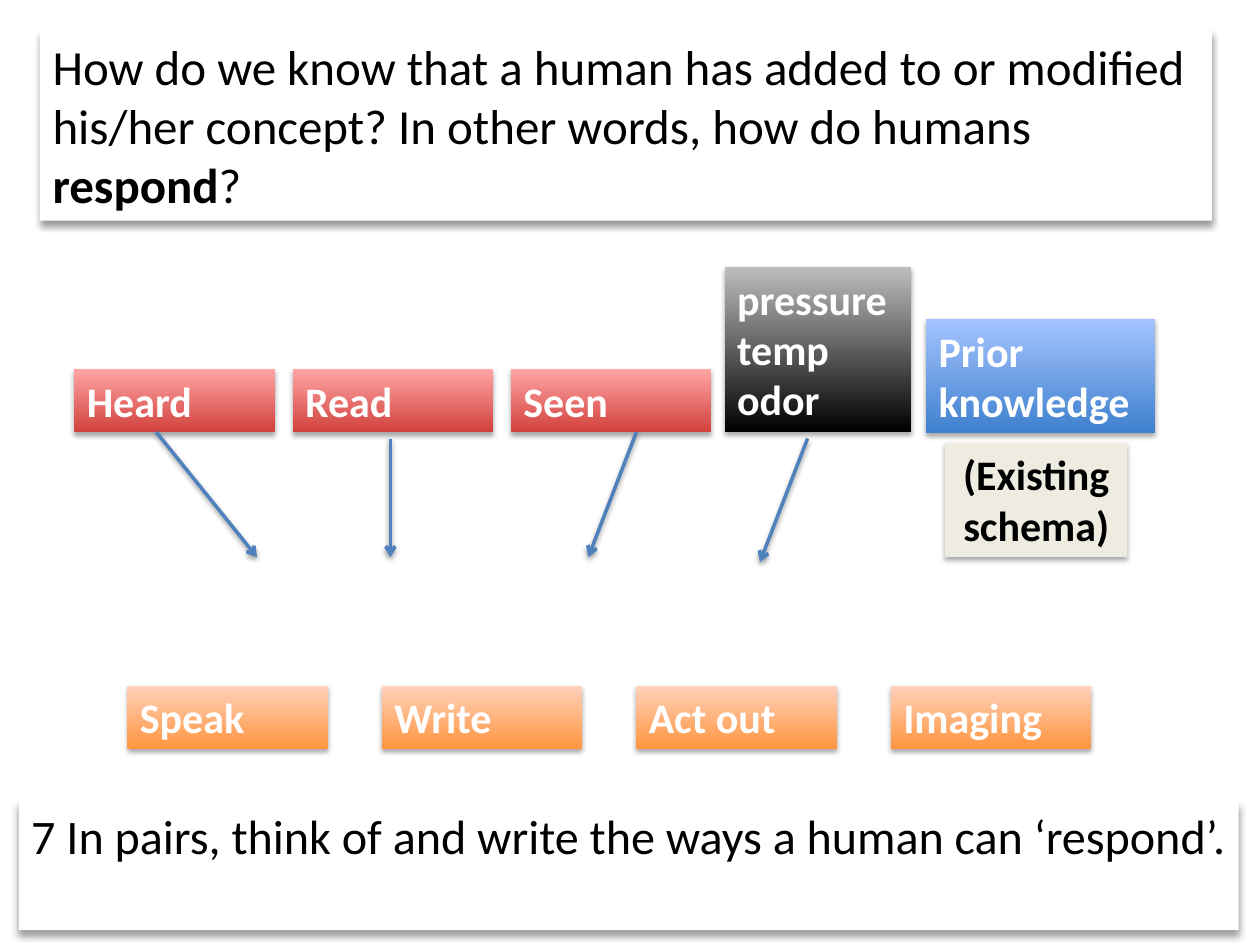
from lxml import etree
from pptx import Presentation
from pptx.dml.color import RGBColor
from pptx.enum.shapes import MSO_CONNECTOR as Link, MSO_SHAPE as Form
from pptx.enum.text import MSO_ANCHOR as Anchor, MSO_AUTO_SIZE as Fit, PP_ALIGN as Align
from pptx.oxml.ns import qn
from pptx.util import Cm, Pt

tint = RGBColor.from_string
deck = Presentation()
deck.slide_width, deck.slide_height = Cm(25.4), Cm(19.05)
slide = deck.slides.add_slide(deck.slide_layouts[6])


def shade(props, blur, dist, alpha):
    """Drop a black shadow straight down."""
    for old in props.findall(qn("a:effectLst")):
        props.remove(old)
    group = etree.SubElement(props, qn("a:effectLst"))
    drop = etree.SubElement(group, qn("a:outerShdw"), blurRad=str(Pt(blur)),
                            dist=str(Pt(dist)), dir="5400000", rotWithShape="0")
    black = etree.SubElement(drop, qn("a:srgbClr"), val="000000")
    etree.SubElement(black, qn("a:alpha"), val=str(alpha * 1000))


def box(text, at, fill, size=24, color="FFFFFF", bold=True, align=Align.LEFT,
        shadow=(3.1, 1.8, 35)):
    """Add a box; fill is (bottom, top) or (plain,); * switches bold."""
    shape = slide.shapes.add_shape(Form.RECTANGLE, *[Cm(n) for n in at])
    if len(fill) == 2:
        shape.fill.gradient()
        shape.fill.gradient_angle = 90
        for place, (stop, code) in enumerate(zip(shape.fill.gradient_stops, fill)):
            stop.position = place
            stop.color.rgb = tint(code)
    else:
        shape.fill.solid()
        shape.fill.fore_color.rgb = tint(fill[0])
    shape.line.fill.background()
    shape.shadow.inherit = False
    shade(shape.element.spPr, *shadow)

    frame = shape.text_frame
    frame.word_wrap = True
    frame.auto_size = Fit.SHAPE_TO_FIT_TEXT
    frame.vertical_anchor = Anchor.TOP
    for row, words in enumerate(text.split("\n")):
        para = frame.add_paragraph() if row else frame.paragraphs[0]
        para.alignment = align
        for turn, part in enumerate(words.split("*")):
            run = para.add_run()
            run.text = part
            font = run.font
            font.name, font.size = "Calibri", Pt(size)
            font.bold = bold != (turn % 2 == 1)
            font.color.rgb = tint(color)


# Question and task
plain = dict(fill=["FFFFFF"], color="000000", bold=False, shadow=(4, 3, 40))
box("How do we know that a human has added to or modified his/her concept? "
    "In other words, how do humans *respond*?",
    (0.81, 0.61, 23.62, 3.84), size=28, **plain)
box("7 In pairs, think of and write the ways a human can ‘respond’.",
    (0.38, 16.13, 24.59, 2.62), size=27.5, **plain)

# Rows of inputs and responses
rows = [
    (["Heard", "Read", "Seen"], 1.5, 4.4, 7.44, ("D1403C", "FFA6A5")),
    (["Speak", "Write", "Act out", "Imaging"], 2.57, 5.13, 13.82, ("FF953E", "FFD2BD")),
]
for names, left, step, top, fill in rows:
    for col, name in enumerate(names):
        box(name, (left + col * step, top, 4.04, 1.28), fill)

# Other senses, prior knowledge and schema
box("pressure\ntemp\nodor", (14.61, 5.38, 3.76, 3.33), ("000000", "BDBDBD"))
box("Prior\nknowledge", (18.67, 6.43, 4.62, 2.31), ("3F80CE", "A4C4FF"))
box("(Existing schema)", (19.05, 8.92, 3.68, 2.31), ["EEECE1"],
    color="000000", align=Align.CENTER)

# Arrows from the inputs
for ends in [(3.15, 8.71, 5.18, 11.23), (7.87, 8.84, 7.87, 11.23),
             (12.83, 8.71, 11.86, 11.23), (16.28, 8.84, 15.32, 11.33)]:
    arrow = slide.shapes.add_connector(Link.STRAIGHT, *[Cm(n) for n in ends])
    arrow.line.color.rgb = tint("4F81BD")
    arrow.line.width = Pt(2)
    props = arrow.element.spPr
    etree.SubElement(props.find(qn("a:ln")), qn("a:tailEnd"), type="arrow")
    shade(props, 3.1, 1.6, 38)

deck.save("out.pptx")
